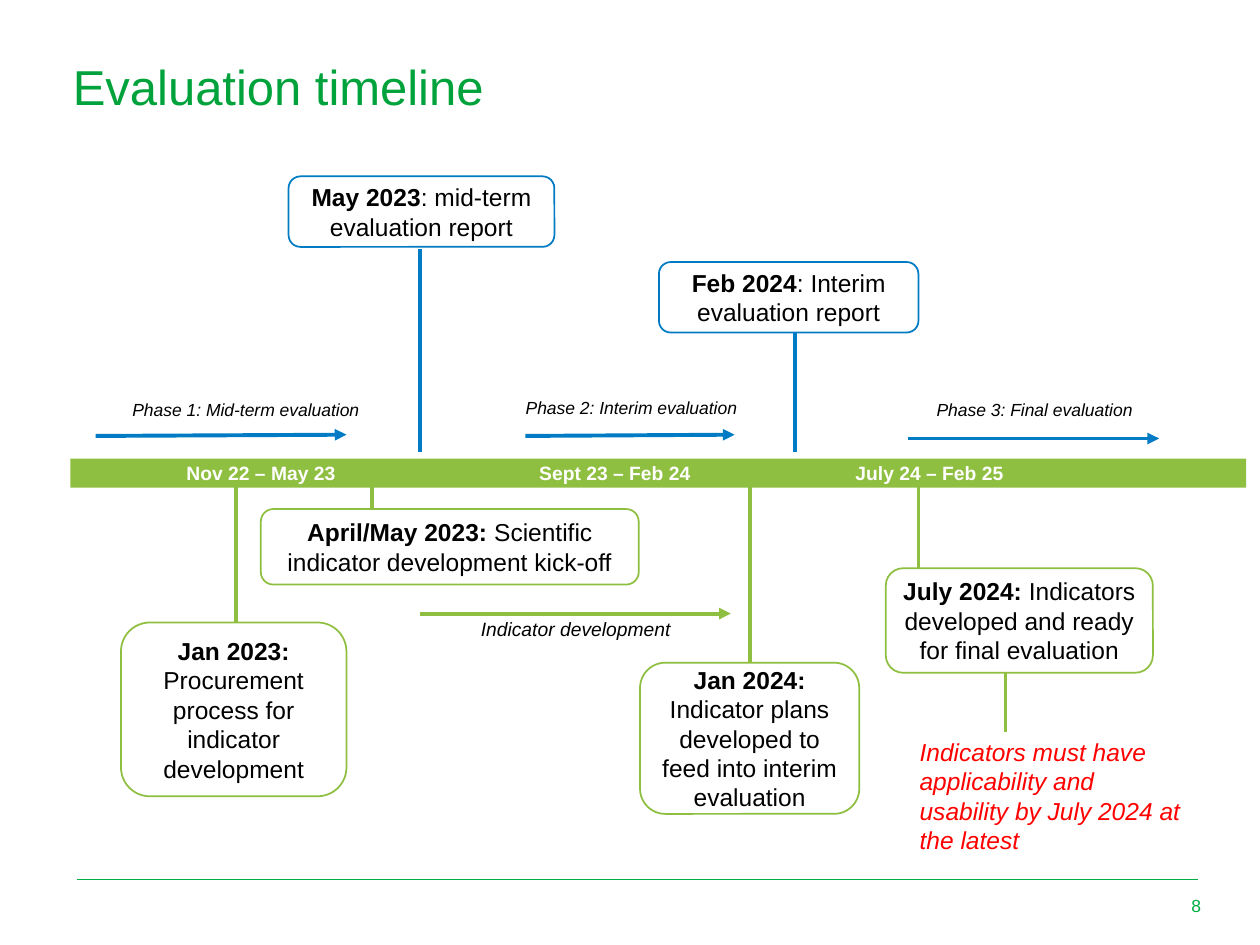
from lxml.etree import SubElement
from pptx import Presentation
from pptx.dml.color import RGBColor
from pptx.enum.shapes import MSO_CONNECTOR, MSO_SHAPE
from pptx.enum.text import MSO_ANCHOR, PP_ALIGN
from pptx.oxml.ns import qn
from pptx.util import Inches, Pt

THEME = {
    "font": "Arial",
    "title": RGBColor(0x00, 0xA3, 0x3B),
    "footer": RGBColor(0x00, 0xAF, 0x41),
    "green": RGBColor(0x8F, 0xBF, 0x41),
    "blue": RGBColor(0x00, 0x7B, 0xC4),
    "black": RGBColor(0x00, 0x00, 0x00),
    "white": RGBColor(0xFF, 0xFF, 0xFF),
    "red": RGBColor(0xFF, 0x00, 0x00),
    "title_size": 28, "body_size": 14, "bar_size": 11, "small_size": 10,
}

prs = Presentation()
prs.slide_width, prs.slide_height = Inches(10), Inches(7.5)
s = prs.slides.add_slide(prs.slide_layouts[6])

# Grid of 100 columns by 75 rows
COL, ROW = prs.slide_width / 100, prs.slide_height / 75


def add_text(box, parts, size, color, align=PP_ALIGN.CENTER, italic=False,
             shape=None, anchor=MSO_ANCHOR.MIDDLE):
    """Add a text box or preset shape; parts are (text, bold) pairs."""
    c, r, w, h = box
    place = int(c * COL), int(r * ROW), int(w * COL), int(h * ROW)
    if shape is None:
        sp = s.shapes.add_textbox(*place)
    else:
        sp = s.shapes.add_shape(shape, *place)
        sp.shadow.inherit = False
    tf = sp.text_frame
    tf.word_wrap, tf.vertical_anchor = True, anchor
    p = tf.paragraphs[0]
    p.alignment = align
    for text, bold in parts:
        run = p.add_run()
        run.text = text
        font = run.font
        font.name, font.size = THEME["font"], Pt(THEME[size])
        font.bold, font.italic = bold, italic
        font.color.rgb = THEME[color]
    return sp


def add_line(start, end, color, width=2.25, arrow=False):
    """Draw a straight line between two (column, row) points."""
    ln = s.shapes.add_connector(
        MSO_CONNECTOR.STRAIGHT, int(start[0] * COL), int(start[1] * ROW),
        int(end[0] * COL), int(end[1] * ROW))
    ln.line.color.rgb, ln.line.width = THEME[color], Pt(width)
    if arrow:
        SubElement(ln.line._get_or_add_ln(), qn("a:tailEnd"), type="triangle")
    SubElement(ln._element.spPr, qn("a:effectLst"))


# Title
title = add_text((4.8, 4.5, 90.4, 4), [("Evaluation timeline", False)],
                 "title_size", "title", PP_ALIGN.LEFT, anchor=MSO_ANCHOR.TOP)
title.text_frame.paragraphs[0].line_spacing = 0.9

# Footer rule and page number
add_line((6.1, 69.8), (95.1, 69.8), "footer", 0.5)
page = add_text((91.8, 70.5, 4.5, 3), [("8", False)],
                "small_size", "footer", PP_ALIGN.RIGHT)
p = page.text_frame.paragraphs[0]
p.line_spacing, p.space_after = 0.9, Pt(6)

# Stems from the bar: column, far row
BAR_TOP, BAR_MID = 35.9, 37.5
for col, row in [(33.3, 19.8), (63.1, 26.2)]:
    add_line((col, BAR_TOP), (col, row), "blue")
for col, row in [(29.5, 43.9), (18.7, 52.2), (59.5, 54.5), (72.9, 46.1)]:
    add_line((col, row), (col, BAR_MID), "green")
add_line((79.8, 58.1), (79.8, 51.4), "green")

# Milestones: colour, box, date, description
milestones = [
    ("blue", (22.9, 14, 21.1, 5.6), "May 2023", ": mid-term evaluation report"),
    ("blue", (52.3, 20.8, 20.6, 5.6), "Feb 2024", ": Interim evaluation report"),
    ("green", (20.7, 40.4, 30, 6), "April/May 2023: ",
     "Scientific indicator development kick-off"),
    ("green", (9.6, 49.4, 17.9, 13.8), "Jan 2023: ",
     "Procurement process for indicator development"),
    ("green", (50.8, 52.6, 17.4, 12), "Jan 2024: ",
     "Indicator plans developed to feed into interim evaluation"),
    ("green", (70.3, 45.1, 21.2, 8.3), "July 2024: ",
     "Indicators developed and ready for final evaluation"),
]
for color, box, date, description in milestones:
    sp = add_text(box, [(date, True), (description, False)], "body_size",
                  "black", shape=MSO_SHAPE.ROUNDED_RECTANGLE)
    sp.fill.solid()
    sp.fill.fore_color.rgb = THEME["white"]
    sp.line.color.rgb, sp.line.width = THEME[color], Pt(1)
    if color == "green":
        tf = sp.text_frame
        tf.margin_left = tf.margin_right = Inches(0.07)
        tf.margin_top = tf.margin_bottom = Inches(0.04)

# Phases: label, label corner, type size, colour, arrow ends
phases = [
    ("Phase 1: Mid-term evaluation", (7.6, 30.9), "small_size", "blue",
     (7.6, 34.6), (27.5, 34.5)),
    ("Phase 2: Interim evaluation", (38.2, 30.7), "small_size", "blue",
     (41.7, 34.6), (58.3, 34.5)),
    ("Phase 3: Final evaluation", (70.2, 30.9), "small_size", "blue",
     (72.1, 34.8), (92, 34.8)),
    ("Indicator development", (33.8, 48.3), "bar_size", "green",
     (33.3, 48.7), (58, 48.7)),
]
for label, corner, size, color, start, end in phases:
    add_line(start, end, color, arrow=True)
    add_text((*corner, 23.8, 3.2), [(label, False)], size, "black", italic=True)

# Requirement note
add_text((72, 58, 23.2, 10.4),
         [("Indicators must have applicability and usability by July 2024 "
           "at the latest", False)],
         "body_size", "red", PP_ALIGN.LEFT, italic=True, anchor=MSO_ANCHOR.TOP)

# Timeline bar, its periods set at tab stops
periods = ["Nov 22 – May 23", "Sept 23 – Feb 24", "July 24 – Feb 25"]
bar = add_text((5.6, 36.4, 93.3, 2.3),
               [("".join("\t" + period for period in periods), True)],
               "bar_size", "white", PP_ALIGN.LEFT, shape=MSO_SHAPE.RECTANGLE)
bar.fill.solid()
bar.fill.fore_color.rgb = THEME["green"]
bar.line.fill.background()
tf = bar.text_frame
tf.margin_left = tf.margin_right = Inches(0.07)
tf.margin_top = tf.margin_bottom = Inches(0.04)
tabs = SubElement(tf.paragraphs[0]._p.get_or_add_pPr(), qn("a:tabLst"))
for col in (8.5, 36.5, 61.6):
    SubElement(tabs, qn("a:tab"), pos=str(int(col * COL)), algn="l")

prs.save("out.pptx")
